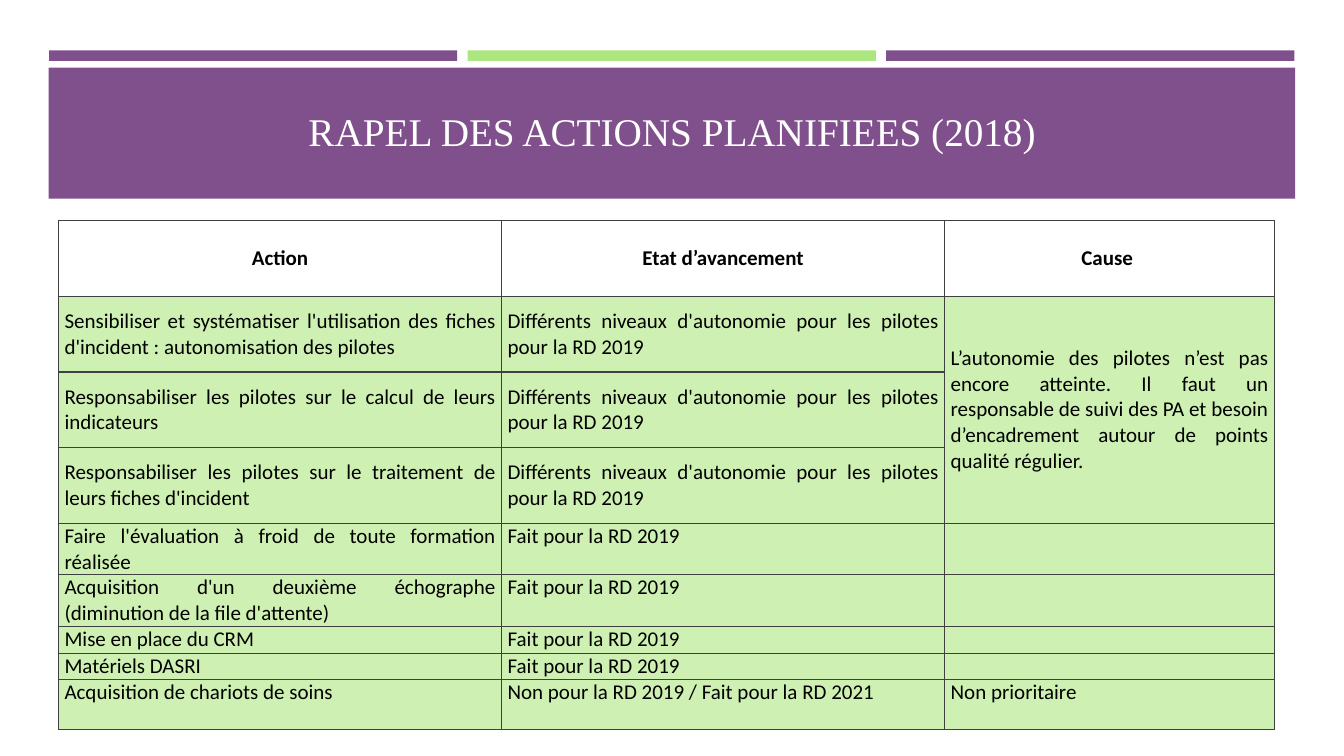
from pptx import Presentation
from pptx.util import Pt
from pptx.dml.color import RGBColor
from pptx.enum.shapes import MSO_SHAPE
from pptx.enum.text import MSO_ANCHOR, PP_ALIGN
from pptx.oxml.ns import qn
from lxml.etree import SubElement

# Content
TITLE = "RAPEL DES ACTIONS PLANIFIEES (2018)"
HEAD = ("Action", "Etat d’avancement", "Cause ")
LEVELS = "Différents niveaux d'autonomie pour les pilotes pour la RD 2019"
DONE = "Fait pour la RD 2019"
CAUSE = ("L’autonomie des pilotes n’est pas encore atteinte. Il faut un responsable "
         "de suivi des PA et besoin d’encadrement autour de points qualité régulier.")
ROWS = [
    HEAD,
    ("Sensibiliser et systématiser l'utilisation des fiches d'incident : "
     "autonomisation des pilotes", LEVELS, CAUSE),
    ("Responsabiliser les pilotes sur le calcul de leurs indicateurs", LEVELS, ""),
    ("Responsabiliser les pilotes sur le traitement de leurs fiches d'incident", LEVELS, ""),
    ("Faire l'évaluation à froid de toute formation réalisée", DONE, ""),
    ("Acquisition d'un deuxième échographe (diminution de la file d'attente)", DONE, ""),
    ("Mise en place du CRM", DONE, ""),
    ("Matériels DASRI", DONE, ""),
    ("Acquisition de chariots de soins", "Non pour la RD 2019 / Fait pour la RD 2021",
     "Non prioritaire"),
]
WIDTHS = (316.5, 316.5, 235.5)
HEIGHTS = (54.1,) * 4 + (36.7, 36.7, 19.4, 18.4, 36)
TALL = 4  # rows with centred text, header included

PURPLE, GREEN, PALE = "7F508B", "ADE67F", "CEF0B2"
BLACK, WHITE, GREY = "000000", "FFFFFF", "404040"


def color(code):
    return RGBColor.from_string(code)


def add_bar(slide, left, top, width, height, fill):
    bar = slide.shapes.add_shape(MSO_SHAPE.RECTANGLE, Pt(left), Pt(top), Pt(width), Pt(height))
    bar.shadow.inherit = False
    bar.fill.solid()
    bar.fill.fore_color.rgb = color(fill)
    bar.line.fill.background()


def add_run(para, text, font, size, ink, bold=False):
    run = para.add_run()
    run.text = text
    run.font.name = font
    run.font.size = Pt(size)
    run.font.bold = bold
    run.font.color.rgb = color(ink)


def add_edges(cell):
    props = cell._tc.get_or_add_tcPr()
    for spot, side in enumerate(("a:lnL", "a:lnR", "a:lnT", "a:lnB")):
        line = props.makeelement(qn(side), {"w": str(Pt(1))})
        fill = SubElement(line, qn("a:solidFill"))
        SubElement(fill, qn("a:srgbClr"), val=GREY)
        props.insert(spot, line)


def fill_cell(cell, text, row, col):
    cell.margin_left = cell.margin_right = Pt(4.3)
    cell.margin_top = cell.margin_bottom = 0
    cell.vertical_anchor = MSO_ANCHOR.MIDDLE if row < TALL else MSO_ANCHOR.TOP
    if row:
        cell.fill.solid()
        cell.fill.fore_color.rgb = color(PALE)
    else:
        cell.fill.background()
    add_edges(cell)
    para = cell.text_frame.paragraphs[0]
    para.alignment = PP_ALIGN.JUSTIFY if row else PP_ALIGN.CENTER
    if text:
        add_run(para, text, "Calibri", 15, BLACK, bold=row == 0)
    else:
        # Keeps empty cells from stretching short rows
        SubElement(para._p, qn("a:endParaRPr"), sz="1200")


def main():
    deck = Presentation()
    deck.slide_width, deck.slide_height = Pt(960), Pt(540)
    slide = deck.slides.add_slide(deck.slide_layouts[6])

    # Top bars and title band
    for num, fill in enumerate((PURPLE, GREEN, PURPLE)):
        add_bar(slide, 35 + num * 299, 36, 291.6, 7.6, fill)
    add_bar(slide, 34.8, 48.4, 890.4, 93.6, PURPLE)

    # Table
    grid = slide.shapes.add_table(len(ROWS), len(HEAD), Pt(41.8), Pt(157.5),
                                  Pt(sum(WIDTHS)), Pt(sum(HEIGHTS))).table
    grid.first_row = grid.horz_banding = False
    for col, width in enumerate(WIDTHS):
        grid.columns[col].width = Pt(width)
    for row, height in enumerate(HEIGHTS):
        grid.rows[row].height = Pt(height)
        for col, text in enumerate(ROWS[row]):
            fill_cell(grid.cell(row, col), text, row, col)
    grid.cell(1, 2).merge(grid.cell(3, 2))
    grid.cell(8, 2).text_frame.paragraphs[0].alignment = PP_ALIGN.LEFT

    # Title
    box = slide.shapes.add_textbox(Pt(46), Pt(67), Pt(868), Pt(47))
    frame = box.text_frame
    frame.word_wrap = True
    frame.vertical_anchor = MSO_ANCHOR.BOTTOM
    para = frame.paragraphs[0]
    para.alignment = PP_ALIGN.CENTER
    add_run(para, TITLE, "Times New Roman", 28, WHITE)

    deck.save("out.pptx")


if __name__ == "__main__":
    main()
